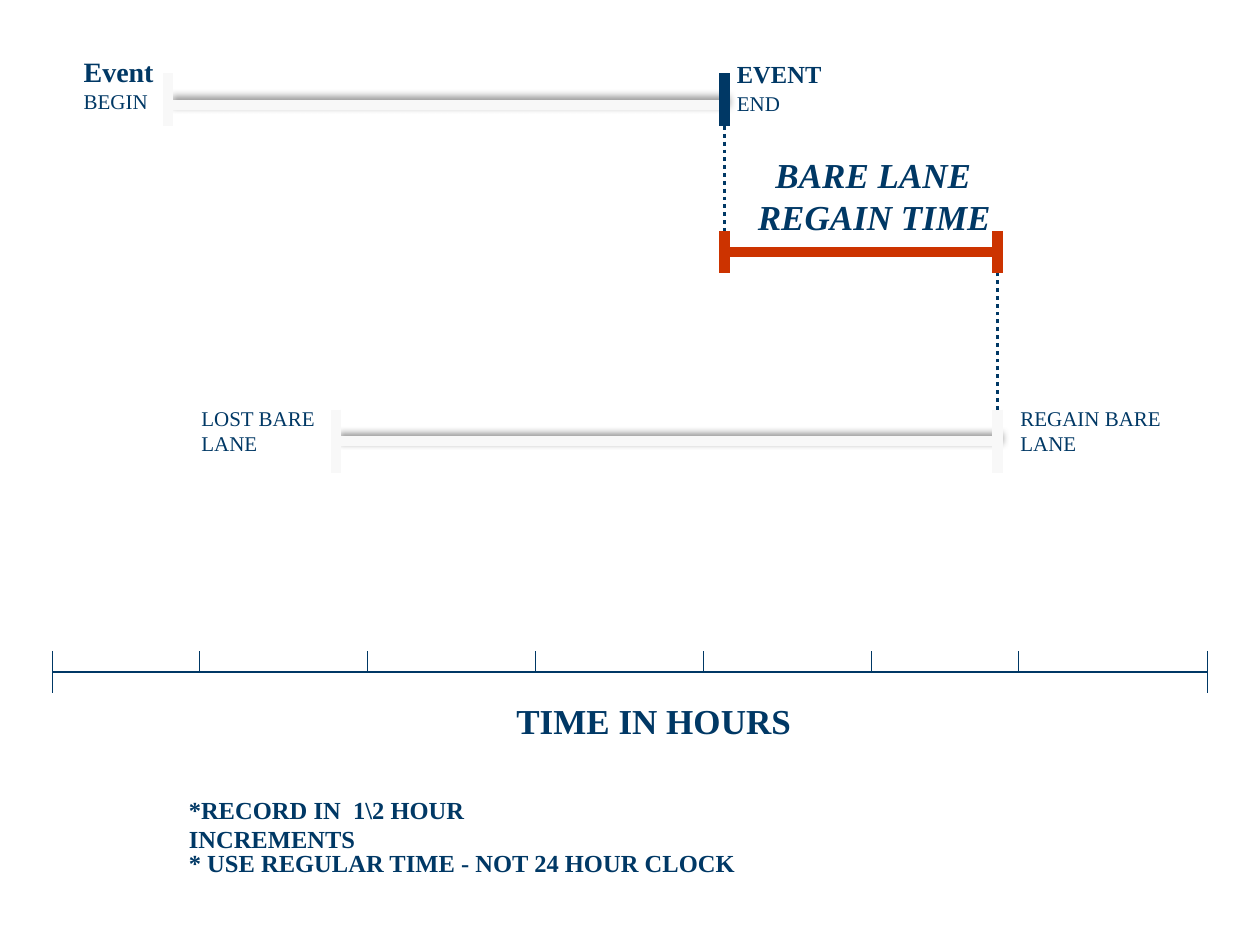
from dataclasses import dataclass

from pptx import Presentation
from pptx import oxml
from pptx import util as u
from pptx.dml import color
from pptx.enum import dml, shapes, text
from pptx.oxml import ns

COLUMNS, ROWS = 120, 90
NAVY, RED, PALE = "003865", "CC3300", "F8F8F8"
FONT = "Times New Roman"

deck = Presentation()
deck.slide_width, deck.slide_height = u.Inches(10), u.Inches(7.5)
slide = deck.slides.add_slide(deck.slide_layouts[6])


@dataclass
class Span:
    start: float
    end: float
    row: float
    color: str
    end_cap: str
    above: float
    below: float
    shadow: bool = False


@dataclass
class Line:
    words: str
    size: float
    bold: bool = False
    italic: bool = False


def across(columns: float) -> int:
    return round(deck.slide_width * columns / COLUMNS)


def down(rows: float) -> int:
    return round(deck.slide_height * rows / ROWS)


def rgb(value: str) -> color.RGBColor:
    return color.RGBColor.from_string(value)


def draw_line(x1: float, y1: float, x2: float, y2: float, hue: str = NAVY,
              width: float = 0.75, dotted: bool = False, shadow: bool = False) -> None:
    line = slide.shapes.add_connector(
        shapes.MSO_CONNECTOR.STRAIGHT, across(x1), down(y1), across(x2), down(y2))
    line.line.color.rgb = rgb(hue)
    line.line.width = u.Pt(width)
    if dotted:
        line.line.dash_style = dml.MSO_LINE.ROUND_DOT
    cast = (f'<a:outerShdw blurRad="{u.Pt(4)}" dist="{u.Pt(3)}" dir="18900000">'
            '<a:srgbClr val="000000"><a:alpha val="40000"/></a:srgbClr>'
            '</a:outerShdw>') if shadow else ""
    line._element.spPr.append(oxml.parse_xml(
        f'<a:effectLst {ns.nsdecls("a")}>{cast}</a:effectLst>'))


def draw_span(span: Span) -> None:
    draw_line(span.start, span.row, span.end, span.row, span.color, 6, shadow=span.shadow)
    for column, cap in ((span.start, span.color), (span.end, span.end_cap)):
        draw_line(column, span.row - span.above, column, span.row + span.below, cap, 6)


def write(lines: list[Line], left: float, top: float, width: float, height: float,
          wrap: bool = False, indent: float = 0) -> None:
    box = slide.shapes.add_textbox(across(left), down(top), across(width), down(height))
    frame = box.text_frame
    frame.word_wrap = wrap
    frame.auto_size = text.MSO_AUTO_SIZE.SHAPE_TO_FIT_TEXT
    for number, line in enumerate(lines):
        paragraph = frame.add_paragraph() if number else frame.paragraphs[0]
        if indent:
            paragraph._p.get_or_add_pPr().set("indent", str(across(indent)))
        run = paragraph.add_run()
        run.text = line.words
        font = run.font
        font.name, font.size = FONT, u.Pt(line.size)
        font.bold, font.italic = line.bold, line.italic
        font.color.rgb = rgb(NAVY)


def main() -> None:
    event_begin, event_end, lane_lost, lane_regained = 16, 69, 32, 95
    event = Span(event_begin, event_end, 10, PALE, NAVY, 3, 2, True)
    bare_lane = Span(lane_lost, lane_regained, 42, PALE, PALE, 3, 3, True)
    regain_time = Span(event_end, lane_regained, 24, RED, RED, 2, 2)

    for span in (event, bare_lane, regain_time):
        draw_span(span)
    draw_line(event_end, 12, event_end, 22, width=2.25, dotted=True)
    draw_line(lane_regained, 39, lane_regained, 26, width=2.25, dotted=True)

    axis_start, axis_end, axis_row = 5, 115, 64
    draw_line(axis_start, axis_row, axis_end, axis_row)
    for column in (axis_start, axis_end):
        draw_line(column, axis_row - 2, column, axis_row + 2)
    for hour in (19, 35, 51, 67, 83, 97):
        draw_line(hour, axis_row, hour, axis_row - 2)

    write([Line("Event", 16, bold=True), Line("BEGIN", 12)],
          6.8, 4.6, 9.6, 6.8, wrap=True)
    write([Line("EVENT", 14, bold=True)], event_end, 5, 12, 4, wrap=True)
    write([Line("END", 12)], event_end, 8, 8, 3.6, wrap=True)
    write([Line("BARE LANE REGAIN TIME", 20, bold=True, italic=True)],
          71, 14, 27, 9.2, wrap=True, indent=1.67)
    write([Line("LOST BARE", 12), Line("LANE", 12)], 18, 38, 14, 6, wrap=True)
    write([Line("REGAIN BARE", 12), Line("LANE", 12)], 96, 38, 17, 6, wrap=True)
    write([Line("TIME IN HOURS", 20, bold=True)], 48, 66, 31, 5.2, wrap=True)
    write([Line("*RECORD IN  1\\2 HOUR INCREMENTS", 14, bold=True)],
          16.8, 75.1, 42, 6.8, wrap=True)
    write([Line("* USE REGULAR TIME - NOT 24 HOUR CLOCK", 14, bold=True)],
          16.8, 80.2, 58, 4, wrap=True)
    deck.save("out.pptx")


if __name__ == "__main__":
    main()
